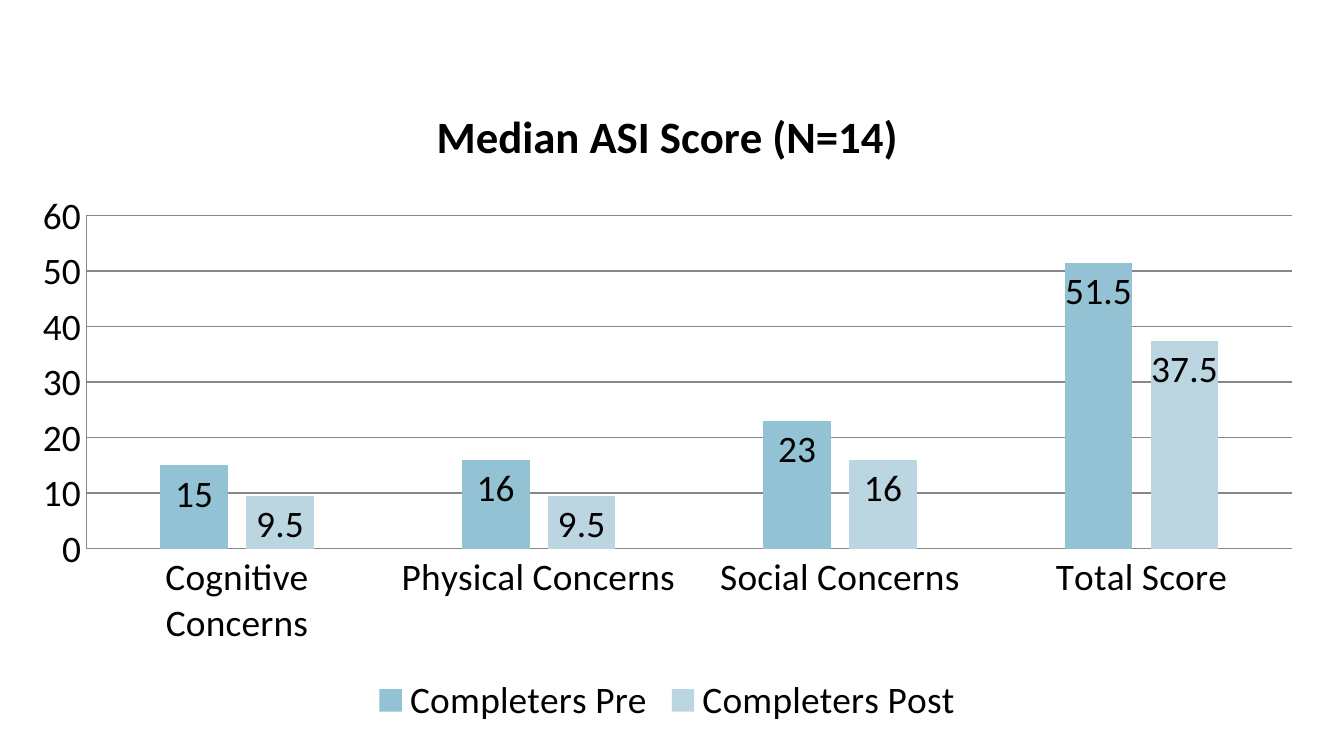
import pptx
import pptx.chart.data
import pptx.dml.color
import pptx.enum.chart
import pptx.oxml
import pptx.oxml.ns
import pptx.util

THEME = {
    "font": "Calibri",
    "text": "000000",
    "line": "878787",
    "series": ["92C2D4", "BCD6E1"],
    "body_size": 20,
    "title_size": 24,
}
SLIDE_WIDTH = pptx.util.Inches(10)
SLIDE_HEIGHT = SLIDE_WIDTH * 9 // 16
CATEGORIES = ["Cognitive Concerns", "Physical Concerns", "Social Concerns", "Total Score"]
SCORES = {
    "Completers Pre": [15, 16, 23, 51.5],
    "Completers Post": [9.5, 9.5, 16, 37.5],
}
# Inner plot area in percent of the chart
PLOT_AREA = {"x": 5.4, "y": 21.1, "w": 92.6, "h": 51}


def color(name):
    return pptx.dml.color.RGBColor.from_string(name)


def format_font(font, size, bold):
    values = {"name": THEME["font"], "size": pptx.util.Pt(size), "bold": bold}
    for attribute, value in values.items():
        setattr(font, attribute, value)
    font.color.rgb = color(THEME["text"])


presentation = pptx.Presentation()
presentation.slide_width, presentation.slide_height = SLIDE_WIDTH, SLIDE_HEIGHT
slide = presentation.slides.add_slide(presentation.slide_layouts[6])

# Chart
chart_data = pptx.chart.data.CategoryChartData()
chart_data.categories = CATEGORIES
for name, values in SCORES.items():
    chart_data.add_series(name, values)
chart = slide.shapes.add_chart(
    pptx.enum.chart.XL_CHART_TYPE.COLUMN_CLUSTERED,
    pptx.util.Inches(0.12), pptx.util.Inches(0.58),
    pptx.util.Inches(9.69), pptx.util.Inches(4.86),
    chart_data,
).chart
format_font(chart.font, THEME["body_size"], False)

# Title and legend
chart.has_title = True
title_frame = chart.chart_title.text_frame
title_frame.text = "Median ASI Score (N=14)"
format_font(title_frame.paragraphs[0].runs[0].font, THEME["title_size"], True)
chart.chart_title.include_in_layout = False
chart.has_legend = True
chart.legend.position = pptx.enum.chart.XL_LEGEND_POSITION.BOTTOM
chart.legend.include_in_layout = False

# Axes
value_axis = chart.value_axis
value_axis.has_major_gridlines = True
for attribute, value in {"minimum_scale": 0, "maximum_scale": 60, "major_unit": 10}.items():
    setattr(value_axis, attribute, value)
for axis in (chart.category_axis, value_axis):
    axis.major_tick_mark = pptx.enum.chart.XL_TICK_MARK.NONE
    axis.minor_tick_mark = pptx.enum.chart.XL_TICK_MARK.NONE
for part in (chart.category_axis, value_axis, value_axis.major_gridlines):
    part.format.line.color.rgb = color(THEME["line"])
    part.format.line.width = pptx.util.Pt(0.75)

# Columns and their labels
plot = chart.plots[0]
for attribute, value in {"gap_width": 219, "overlap": -27, "vary_by_categories": False}.items():
    setattr(plot, attribute, value)
for series, fill_color in zip(plot.series, THEME["series"]):
    series.format.fill.solid()
    series.format.fill.fore_color.rgb = color(fill_color)
    labels = series.data_labels
    labels.show_value = True
    labels.position = pptx.enum.chart.XL_LABEL_POSITION.INSIDE_END
    format_font(labels.font, THEME["body_size"], False)

# Fixed plot area
plot_area = chart.element.chart.plotArea
for old_layout in plot_area.findall(pptx.oxml.ns.qn("c:layout")):
    plot_area.remove(old_layout)
modes = "".join(f'<c:{key}Mode val="edge"/>' for key in "xy")
sizes = "".join(f'<c:{key} val="{percent / 100}"/>' for key, percent in PLOT_AREA.items())
plot_area.insert(0, pptx.oxml.parse_xml(
    f'<c:layout {pptx.oxml.ns.nsdecls("c")}><c:manualLayout>'
    f'<c:layoutTarget val="inner"/>{modes}{sizes}</c:manualLayout></c:layout>'
))

presentation.save("out.pptx")
